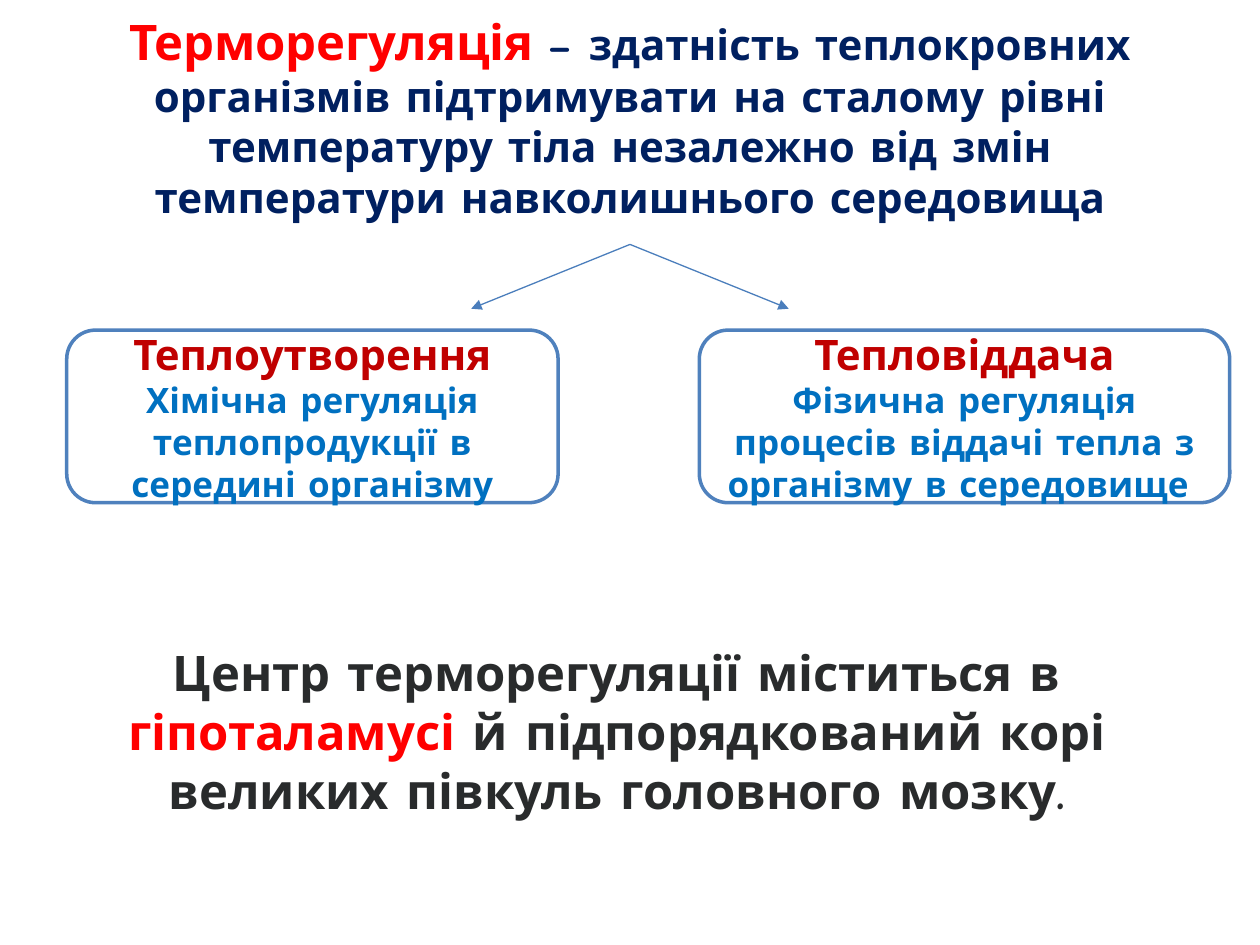
from dataclasses import dataclass

from lxml.etree import SubElement
from pptx import Presentation
from pptx.dml.color import RGBColor
from pptx.enum.shapes import MSO_CONNECTOR, MSO_SHAPE
from pptx.enum.text import MSO_ANCHOR, MSO_AUTO_SIZE, PP_ALIGN
from pptx.oxml.ns import qn
from pptx.slide import Slide
from pptx.text.text import TextFrame
from pptx.util import Inches, Pt

COLUMNS, ROWS = 100, 75
SLIDE_WIDTH, SLIDE_HEIGHT = Inches(10), Inches(7.5)


@dataclass(frozen=True)
class Theme:
    font: str = "Comic Neue"
    large: int = 28
    medium: int = 24
    small: int = 20
    red: str = "FF0000"
    black: str = "000000"
    navy: str = "002060"
    heading: str = "C00000"
    blue: str = "0070C0"
    dark: str = "292B2C"
    white: str = "FFFFFF"
    outline: str = "4F81BD"
    arrow: str = "4B7EBC"


THEME = Theme()


@dataclass(frozen=True)
class Span:
    text: str
    size: int
    color: str
    bold: bool = True


@dataclass(frozen=True)
class Area:
    """A place on the grid, in columns and rows."""
    column: float
    row: float
    columns: float
    rows: float

    def lengths(self) -> tuple[int, int, int, int]:
        return (across(self.column), down(self.row),
                across(self.columns), down(self.rows))


@dataclass(frozen=True)
class Process:
    area: Area
    heading: str
    description: str


def across(columns: float) -> int:
    return round(SLIDE_WIDTH * columns / COLUMNS)


def down(rows: float) -> int:
    return round(SLIDE_HEIGHT * rows / ROWS)


def write(frame: TextFrame, paragraphs: list[list[Span]], **frame_format) -> None:
    settings = {"word_wrap": True, "auto_size": MSO_AUTO_SIZE.NONE} | frame_format
    for name, value in settings.items():
        setattr(frame, name, value)
    for index, spans in enumerate(paragraphs):
        paragraph = frame.add_paragraph() if index else frame.paragraphs[0]
        paragraph.alignment = PP_ALIGN.CENTER
        for span in spans:
            run = paragraph.add_run()
            run.text = span.text
            font_format = {"name": THEME.font, "size": Pt(span.size), "bold": span.bold}
            for name, value in font_format.items():
                setattr(run.font, name, value)
            run.font.color.rgb = RGBColor.from_string(span.color)


def place_title(slide: Slide, area: Area, spans: list[Span]) -> None:
    title = slide.shapes.title
    for name, value in zip(("left", "top", "width", "height"), area.lengths()):
        setattr(title, name, value)
    write(title.text_frame, [spans], vertical_anchor=MSO_ANCHOR.MIDDLE)


def add_process(slide: Slide, process: Process) -> None:
    shape = slide.shapes.add_shape(MSO_SHAPE.ROUNDED_RECTANGLE, *process.area.lengths())
    shape.shadow.inherit = False
    shape.fill.solid()
    shape.fill.fore_color.rgb = RGBColor.from_string(THEME.white)
    shape.line.color.rgb = RGBColor.from_string(THEME.outline)
    shape.line.width = Pt(2)
    write(shape.text_frame, [
        [Span(process.heading, THEME.medium, THEME.heading)],
        [Span(process.description, THEME.small, THEME.blue)],
    ], vertical_anchor=MSO_ANCHOR.MIDDLE)


def add_arrow(slide: Slide, start: tuple[float, float], end: tuple[float, float]) -> None:
    arrow = slide.shapes.add_connector(
        MSO_CONNECTOR.STRAIGHT,
        across(start[0]), down(start[1]), across(end[0]), down(end[1]))
    arrow.line.color.rgb = RGBColor.from_string(THEME.arrow)
    arrow.line.width = Pt(0.75)
    SubElement(arrow.line._get_or_add_ln(), qn("a:tailEnd"), type="triangle")
    SubElement(arrow._element.spPr, qn("a:effectLst"))


def main() -> None:
    presentation = Presentation()
    presentation.slide_width, presentation.slide_height = SLIDE_WIDTH, SLIDE_HEIGHT
    slide = presentation.slides.add_slide(presentation.slide_layouts[5])

    # Definition
    place_title(slide, Area(5, 3, 90, 12.5), [
        Span("Терморегуляція", THEME.large, THEME.red),
        Span(" ", THEME.medium, THEME.black, bold=False),
        Span("– здатність теплокровних організмів підтримувати на сталому рівні "
             "температуру тіла незалежно від змін температури навколишнього середовища",
             THEME.medium, THEME.navy),
    ])

    # The two processes
    for process in (
        Process(Area(5.3, 26.2, 39, 13.7), "Теплоутворення",
                "Хімічна регуляція теплопродукції в середині організму"),
        Process(Area(55.5, 26.2, 42.1, 13.7), "Тепловіддача",
                "Фізична регуляція процесів віддачі тепла з організму в середовище "),
    ):
        add_process(slide, process)

    # Control centre
    centre = slide.shapes.add_textbox(*Area(1.2, 50.5, 95.5, 15.1).lengths())
    write(centre.text_frame, [[
        Span("Центр терморегуляції міститься в ", THEME.large, THEME.dark),
        Span("гіпоталамусі", THEME.large, THEME.red),
        Span(" й підпорядкований корі великих півкуль головного мозку.",
             THEME.large, THEME.dark),
    ]], auto_size=MSO_AUTO_SIZE.SHAPE_TO_FIT_TEXT)

    # Arrows fan out evenly from the middle of the slide
    middle, reach = COLUMNS / 2, 12.6
    for side in (-1, 1):
        add_arrow(slide, (middle, 19.4), (middle + side * reach, 24.5))

    presentation.save("out.pptx")


if __name__ == "__main__":
    main()
